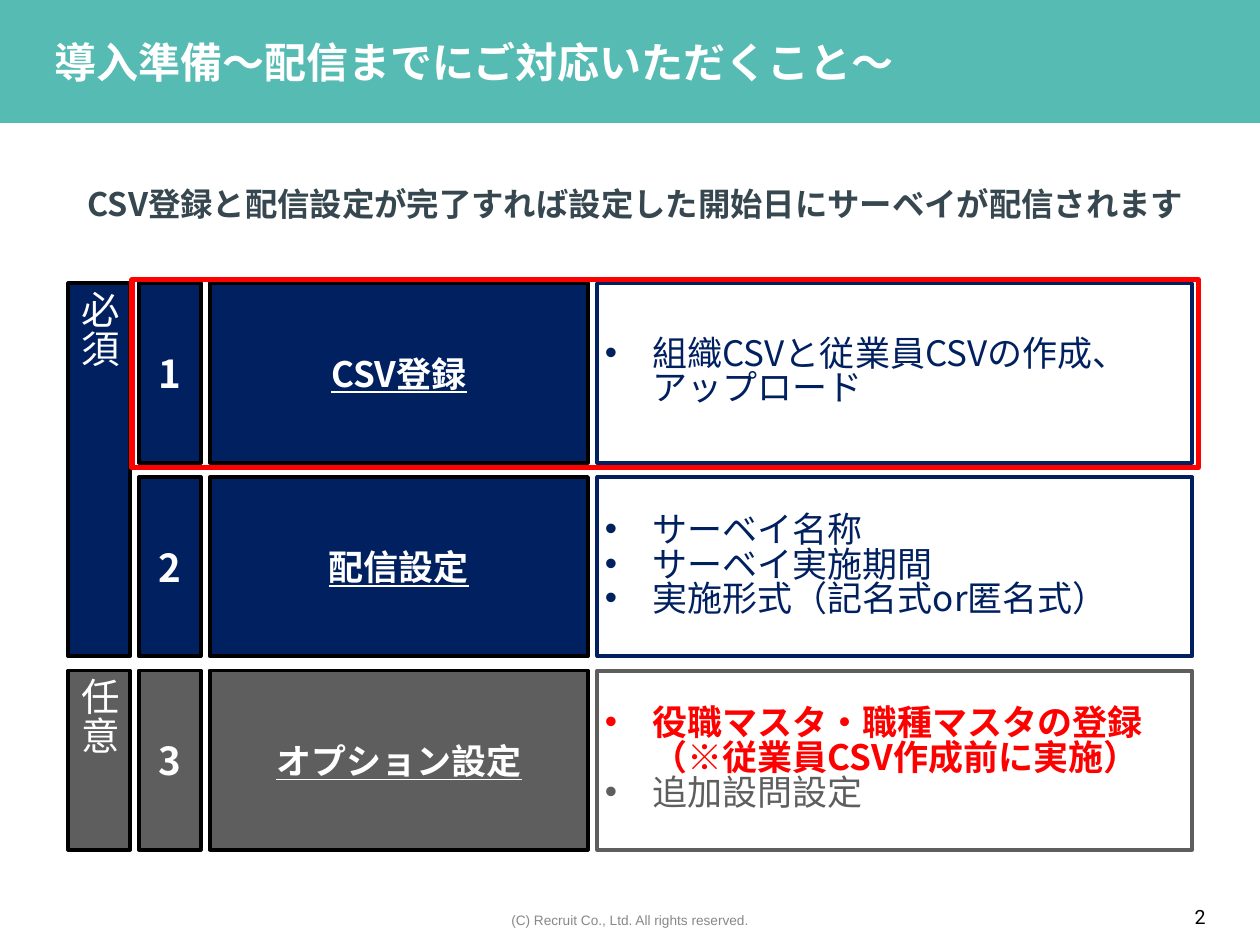
from lxml.etree import SubElement as Sub
from pptx import Presentation as Deck
from pptx.dml.color import RGBColor as Color
from pptx.enum.shapes import MSO_SHAPE as Kind
from pptx.enum.text import MSO_ANCHOR as Anchor, MSO_AUTO_SIZE as Auto, PP_ALIGN as Align
from pptx.oxml.ns import qn
from pptx.util import Pt

FONT = "Noto Sans CJK JP"
NAVY, GRAY, RED, WHITE, BLACK = "002060", "5E5E5E", "FF0000", "FFFFFF", "000000"
TOP, PITCH, HIGH = 162, 110.6, 102.4
SIDE, NUM, NAME, LIST = (39, 35.3), (79.4, 35.3), (120, 216), (341.4, 339.8)
ROWS = [
    ("CSV登録", NAVY, [("組織CSVと従業員CSVの作成、アップロード", NAVY, False)]),
    ("配信設定", NAVY, [(text, NAVY, False) for text in
                    ("サーベイ名称", "サーベイ実施期間", "実施形式（記名式or匿名式）")]),
    ("オプション設定", GRAY, [("役職マスタ・職種マスタの登録（※従業員CSV作成前に実施）", RED, True),
                       ("追加設問設定", GRAY, False)]),
]


def rgb(code):
    """Turn a hex string into a colour."""
    return Color.from_string(code)


def apply(item, form):
    """Set each attribute of the item from a dict."""
    for key, value in form.items():
        setattr(item, key, value)


def place(shape, box):
    """Move and size a shape by a box in points."""
    apply(shape, dict(zip(("left", "top", "width", "height"), map(Pt, box))))


def paint(shape, fill=None, line=None, width=2.25):
    """Give a shape its fill and outline."""
    if fill:
        shape.fill.solid()
        shape.fill.fore_color.rgb = rgb(fill)
    else:
        shape.fill.background()
    if line:
        shape.line.color.rgb = rgb(line)
        shape.line.width = Pt(width)
    else:
        shape.line.fill.background()


def frame(shape, pad, anchor=Anchor.MIDDLE):
    """Set up the text frame of a shape."""
    edges = ("margin_left", "margin_top", "margin_right", "margin_bottom")
    form = dict(word_wrap=True, auto_size=Auto.NONE, vertical_anchor=anchor)
    apply(shape.text_frame, form | dict.fromkeys(edges, Pt(pad)))


def write(para, text, size, code, align=Align.CENTER, face=FONT, **form):
    """Write one formatted run into a paragraph."""
    apply(para, dict(alignment=align, space_before=Pt(0)))
    run = para.add_run()
    run.text = text
    apply(run.font, dict(name=face, size=Pt(size), bold=False) | form)
    run.font.color.rgb = rgb(code)
    Sub(run.font._element, qn("a:ea"), typeface=face)


def rect(slide, box, fill=None, line=None, width=2.25):
    """Add a plain rectangle."""
    shape = slide.shapes.add_shape(Kind.RECTANGLE, *map(Pt, box))
    shape.shadow.inherit = False
    paint(shape, fill, line, width)
    return shape


def cell(slide, box, fill, text, size=22, **form):
    """Add a filled cell with a centred label."""
    shape = rect(slide, box, fill, BLACK)
    frame(shape, 4.3)
    write(shape.text_frame.paragraphs[0], text, size, WHITE, **form)


def side(slide, top, high, fill, text):
    """Add a side cell with upright text."""
    shape = rect(slide, (SIDE[0], top, SIDE[1], high), fill, BLACK)
    frame(shape, 4.3, Anchor.TOP)
    shape.text_frame._txBody.bodyPr.set("vert", "eaVert")
    write(shape.text_frame.paragraphs[0], text, 22, WHITE, Align.LEFT)


def points(shape, box, line, items):
    """Fill a body placeholder with a framed bullet list."""
    place(shape, box)
    paint(shape, line=line)
    frame(shape, 4.3)
    body = shape.text_frame
    for i, (text, code, bold) in enumerate(items):
        para = body.add_paragraph() if i else body.paragraphs[0]
        para.line_spacing = 0.83
        write(para, text, 20, code, Align.LEFT, bold=bold)
        props = para._p.get_or_add_pPr()
        props.set("marL", str(Pt(27)))
        props.set("indent", str(Pt(-27)))
        Sub(props, qn("a:buFont"), typeface="Arial")
        Sub(props, qn("a:buChar"), char="•")


def label(shape, box, text, size, code, pad=0, **form):
    """Place a box and write one line in it."""
    place(shape, box)
    frame(shape, pad)
    write(shape.text_frame.paragraphs[0], text, size, code, **form)


def note(slide, box, *text, **form):
    """Add a small text box."""
    label(slide.shapes.add_textbox(0, 0, 0, 0), box, *text, **form)


def main():
    """Build the slide and save it."""
    deck = Deck()
    apply(deck, dict(slide_width=Pt(720), slide_height=Pt(540)))
    slide = deck.slides.add_slide(deck.slide_layouts[4])
    title, lead, *lists = slide.placeholders

    band = rect(slide, (0, 0, 720, 70.3), "55BBB3")
    slide.shapes._spTree.insert(2, band._element)
    label(title, (31, 21, 486, 29), "導入準備～配信までにご対応いただくこと～",
          24, WHITE, align=Align.LEFT, bold=True)
    label(lead, (38, 101.5, 650, 29.5),
          "CSV登録と配信設定が完了すれば設定した開始日にサーベイが配信されます",
          18.5, "37474F", bold=True)

    for i, (name, tint, items) in enumerate(ROWS):
        top = TOP + i * PITCH
        cell(slide, (NUM[0], top, NUM[1], HIGH), tint, str(i + 1), bold=True)
        cell(slide, (NAME[0], top, NAME[1], HIGH), tint, name, 20, bold=True, underline=True)
        points(lists[i], (LIST[0], top, LIST[1], HIGH), tint, items)
    side(slide, TOP, PITCH + HIGH, NAVY, "必須")
    side(slide, TOP + 2 * PITCH, HIGH, GRAY, "任意")
    rect(slide, (75.4, 159.8, 609.4, 107.6), line=RED, width=3)

    note(slide, (160, 517.5, 400, 16.5), "(C) Recruit Co., Ltd. All rights reserved.",
         7.8, "888888", face="Arial")
    note(slide, (664.5, 513, 42.5, 21), "2", 11.2, BLACK, face="Roboto")
    deck.save("out.pptx")


if __name__ == "__main__":
    main()
